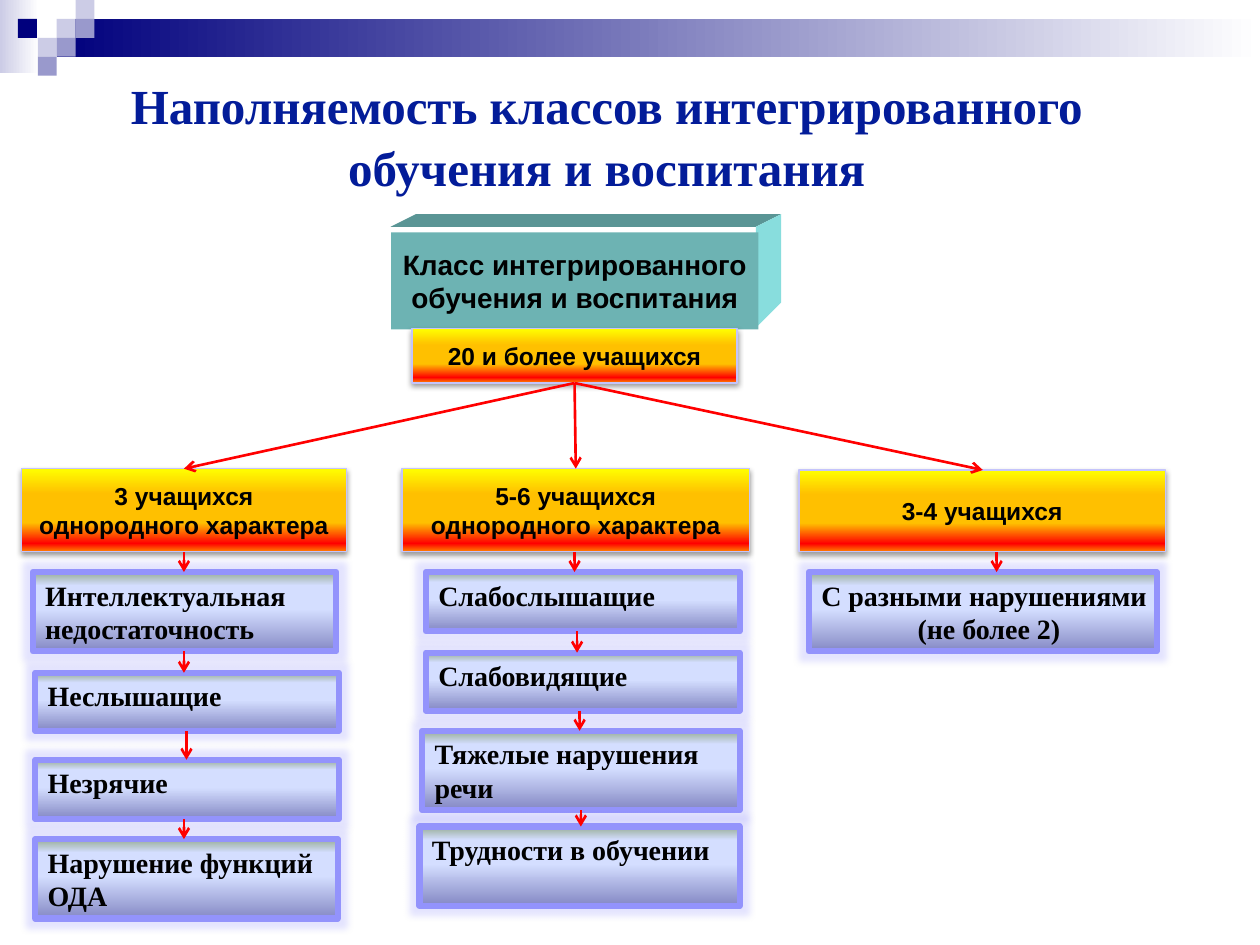
from dataclasses import dataclass

from lxml import etree
from pptx import Presentation
from pptx.dml.color import RGBColor
from pptx.enum.shapes import MSO_CONNECTOR, MSO_SHAPE
from pptx.enum.text import MSO_ANCHOR, MSO_AUTO_SIZE, PP_ALIGN
from pptx.oxml.ns import qn
from pptx.util import Inches, Pt

RECTANGLE, PROCESS = MSO_SHAPE.RECTANGLE, MSO_SHAPE.FLOWCHART_PROCESS
LEFT, CENTER = PP_ALIGN.LEFT, PP_ALIGN.CENTER
TOP, MIDDLE = MSO_ANCHOR.TOP, MSO_ANCHOR.MIDDLE

# The slide is a grid of 100 columns by 75 rows.
COLUMNS, ROWS = 100, 75
CELL = Inches(0.1)
TILE = 1.5

COLORS = {
    "title": "031C99", "text": "000000", "arrow": "FF0000",
    "navy": "00007D", "pale": "CCCCE6", "mid": "9999CC", "white": "FFFFFF",
    "block front": "6DB3B3", "block top": "5A9595", "block side": "88DDDD",
    "count line": "C4C4FB", "group line": "9393FC",
}
FADE_PALE = [(0, COLORS["pale"]), (100, COLORS["white"])]
FADE_NAVY = [(0, COLORS["navy"]), (100, COLORS["white"])]
FIRE = [(0, "FFFF00"), (30, "FFC000"), (65, "FFC000"), (90, "FF0000"), (100, "FF8200")]
STEEL = [(0, "8488C4"), (53, "D4DEFF"), (83, "D4DEFF"), (100, "96AB94")]

BLOCK_TEXT = {"size": Pt(16), "name": "Arial", "bold": True}
COUNT_TEXT = {"size": Pt(14), "name": "Arial", "bold": True}
GROUP_TEXT = {"size": Pt(16), "name": "Times New Roman", "bold": True}
TITLE_TEXT = {"size": Pt(28), "name": "Times New Roman", "bold": True}
TIGHT_INSETS = {"margin_left": Inches(0.07), "margin_right": Inches(0.07),
                "margin_top": Inches(0.03), "margin_bottom": Inches(0.03)}
GROUP_INSETS = {"margin_right": 0}


@dataclass
class Box:
    left: float
    top: float
    width: float
    height: float
    lines: tuple[str, ...] = ()
    arrow_x: float = 0

    @property
    def bottom(self) -> float:
        return self.top + self.height


@dataclass
class Branch:
    """A pupil count, the end of its arrow, and the groups listed below it."""
    count: Box
    arrow_end: float
    groups: list[Box]


BLOCK = Box(31.05, 18.45, 29.15, 7.7, ("Класс интегрированного", "обучения и воспитания"))
BLOCK_DEPTH = 1.7
TOTAL = Box(32.7, 26.1, 25.8, 4.3, ("20 и более учащихся",), 45.6)
BRANCHES = [
    Branch(Box(1.7, 37.2, 25.8, 6.6, ("3 учащихся", "однородного характера")), 14.6, [
        Box(2.6, 45.4, 24.1, 6.3, ("Интеллектуальная", "недостаточность"), 14.6),
        Box(2.8, 53.4, 24.1, 4.6, ("Неслышащие",), 14.6),
        Box(2.8, 60.3, 24.1, 4.7, ("Незрячие",), 14.8),
        Box(2.8, 66.6, 24, 6.3, ("Нарушение функций", "ОДА"), 14.6),
    ]),
    Branch(Box(31.9, 37.2, 27.6, 6.6, ("5-6 учащихся", "однородного характера")), 45.7, [
        Box(33.8, 45.4, 24.9, 4.7, ("Слабослышащие",), 45.6),
        Box(33.8, 51.8, 24.9, 4.6, ("Слабовидящие",), 45.8),
        Box(33.5, 58, 25.2, 6.3, ("Тяжелые нарушения", "речи"), 46),
        Box(33.3, 65.6, 25.4, 6.3, ("Трудности в обучении",), 46.1),
    ]),
    Branch(Box(63.4, 37.3, 29.1, 6.5, ("3-4 учащихся",)), 78, [
        Box(64.2, 45.4, 27.6, 6.3, ("С разными нарушениями", "(не более 2)"), 79.1),
    ]),
]
TILES = [(3, 1, "pale"), (4, 0, "pale"), (4, 1, "mid"), (2, 2, "pale"),
         (0.95, 1, "navy"), (3, 2, "mid"), (2, 3, "mid")]


def cells(count: float) -> int:
    return round(count * CELL)


def color(name: str) -> RGBColor:
    return RGBColor.from_string(COLORS[name])


def apply(target, values: dict) -> None:
    for name, value in values.items():
        setattr(target, name, value)


def fill_gradient(shape, stops, angle: int) -> None:
    """Fill with any number of stops; the angle is counter-clockwise."""
    shape.fill.gradient()
    shape.fill.gradient_angle = angle
    stop_list = shape._element.spPr.find(qn("a:gradFill")).find(qn("a:gsLst"))
    for stop in list(stop_list):
        stop_list.remove(stop)
    for position, value in stops:
        stop = etree.SubElement(stop_list, qn("a:gs"), pos=str(position * 1000))
        etree.SubElement(stop, qn("a:srgbClr"), val=value)


def add_effect(shape, kind: str, value: str, alpha: int, **settings: str) -> None:
    effects = shape._element.spPr.find(qn("a:effectLst"))
    effect = etree.SubElement(effects, qn(kind), **settings)
    tint = etree.SubElement(effect, qn("a:srgbClr"), val=value)
    etree.SubElement(tint, qn("a:alpha"), val=str(alpha * 1000))


def add_box(slide, box: Box, kind=RECTANGLE, fill="white", stops=None, angle=0):
    shape = slide.shapes.add_shape(
        kind, cells(box.left), cells(box.top), cells(box.width), cells(box.height))
    shape.shadow.inherit = False
    shape.line.fill.background()
    if stops:
        fill_gradient(shape, stops, angle)
    else:
        shape.fill.solid()
        shape.fill.fore_color.rgb = color(fill)
    return shape


def write(shape, lines, text_format: dict, insets: dict, anchor=MIDDLE,
          alignments=(CENTER, CENTER), text_color="text") -> None:
    frame = shape.text_frame
    apply(frame, {"word_wrap": True, "vertical_anchor": anchor, **insets})
    frame.text = "\n".join(lines)
    for paragraph, alignment in zip(frame.paragraphs, alignments):
        paragraph.alignment = alignment
        apply(paragraph.runs[0].font, text_format)
        paragraph.runs[0].font.color.rgb = color(text_color)


def add_arrow(slide, x1: float, y1: float, x2: float, y2: float) -> None:
    arrow = slide.shapes.add_connector(
        MSO_CONNECTOR.STRAIGHT, cells(x1), cells(y1), cells(x2), cells(y2))
    arrow.line.color.rgb = color("arrow")
    arrow.line.width = Pt(1.5)
    etree.SubElement(arrow.line._get_or_add_ln(), qn("a:tailEnd"), type="arrow")
    etree.SubElement(arrow._element.spPr, qn("a:effectLst"))


def add_count(slide, box: Box) -> None:
    shape = add_box(slide, box, stops=FIRE, angle=270)
    shape.line.color.rgb = color("count line")
    shape.line.width = Pt(0.75)
    add_effect(shape, "a:outerShdw", "000000", 38, blurRad=str(Pt(3.1)),
               dist=str(Pt(1.6)), dir="5400000", rotWithShape="0")
    write(shape, box.lines, COUNT_TEXT, TIGHT_INSETS)


def add_group(slide, box: Box) -> None:
    shape = add_box(slide, box, PROCESS, stops=STEEL, angle=90)
    shape.line.color.rgb = color("group line")
    shape.line.width = Pt(3.5)
    etree.SubElement(shape.line._get_or_add_ln(), qn("a:round"))
    add_effect(shape, "a:glow", COLORS["group line"], 25, rad=str(Pt(8)))
    second = CENTER if box.lines[-1].startswith("(") else LEFT
    write(shape, box.lines, GROUP_TEXT, GROUP_INSETS, TOP, (LEFT, second))


def add_block(slide) -> None:
    """Draw the block as a front with a slanted top and right side."""
    left, top, bottom = BLOCK.left, BLOCK.top, BLOCK.bottom
    right, depth = left + BLOCK.width, BLOCK_DEPTH
    back = (right + depth, top - depth)
    faces = {
        "block top": [(left, top), (left + depth, top - depth), back, (right, top)],
        "block side": [(right, top), back, (right + depth, bottom - depth), (right, bottom)],
    }
    for name, points in faces.items():
        builder = slide.shapes.build_freeform(*points[0], scale=float(CELL))
        builder.add_line_segments(points[1:], close=True)
        face = builder.convert_to_shape()
        face.shadow.inherit = False
        face.fill.solid()
        face.fill.fore_color.rgb = color(name)
        face.line.fill.background()
    front = add_box(slide, BLOCK, fill="block front")
    write(front, (" ".join(BLOCK.lines),), BLOCK_TEXT, TIGHT_INSETS)


def add_banner(slide) -> None:
    add_box(slide, Box(0, 0, 3.1, 5.8), stops=FADE_PALE)
    add_box(slide, Box(4.5, TILE, COLUMNS - 4.5, 2 * TILE), stops=FADE_NAVY)
    for column, row, name in TILES:
        add_box(slide, Box(column * TILE, row * TILE, TILE, TILE), fill=name)


def add_title(slide) -> None:
    title = slide.shapes.title
    apply(title, {"left": cells(1.7), "top": cells(6), "width": cells(92.9),
                  "height": cells(9.3)})
    title.text_frame.auto_size = MSO_AUTO_SIZE.NONE
    write(title, ("Наполняемость классов интегрированного обучения и воспитания",),
          TITLE_TEXT, {}, text_color="title")
    title.text_frame.paragraphs[0].line_spacing = 1.05


def main() -> None:
    presentation = Presentation()
    presentation.slide_width, presentation.slide_height = cells(COLUMNS), cells(ROWS)
    slide = presentation.slides.add_slide(presentation.slide_layouts[5])
    add_banner(slide)
    add_title(slide)
    add_block(slide)
    add_count(slide, TOTAL)
    for branch in BRANCHES:
        add_count(slide, branch.count)
        add_arrow(slide, TOTAL.arrow_x, TOTAL.bottom, branch.arrow_end, branch.count.top)
        for group in branch.groups:
            add_group(slide, group)
        for above, below in zip([branch.count, *branch.groups], branch.groups):
            add_arrow(slide, below.arrow_x, above.bottom, below.arrow_x, below.top)
    presentation.save("out.pptx")


if __name__ == "__main__":
    main()
